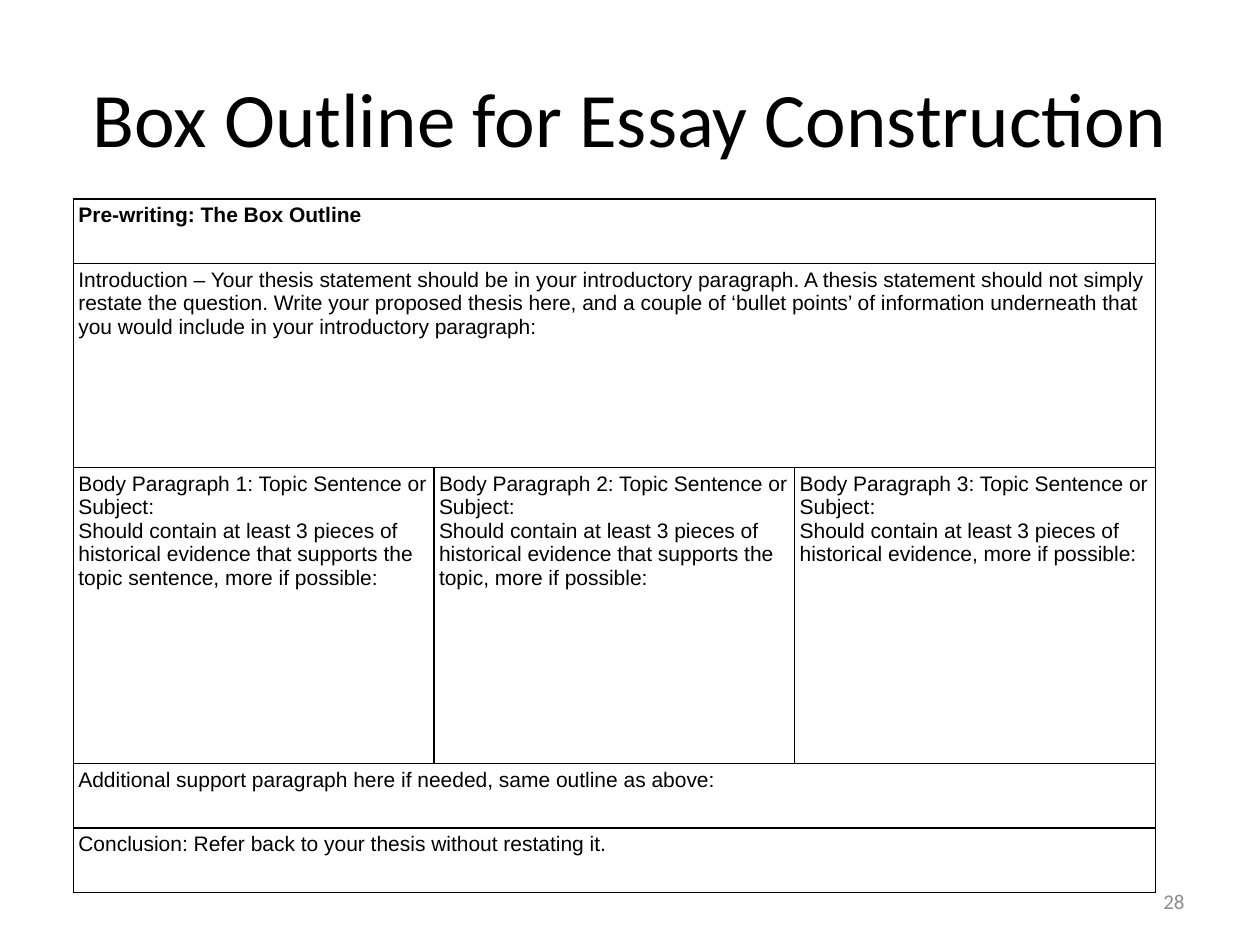
from lxml import etree
from pptx import Presentation
from pptx.dml.color import RGBColor
from pptx.enum.text import MSO_ANCHOR, PP_ALIGN
from pptx.oxml.ns import qn
from pptx.util import Cm, Pt

LEFT, CENTER, RIGHT = PP_ALIGN.LEFT, PP_ALIGN.CENTER, PP_ALIGN.RIGHT
MIDDLE = MSO_ANCHOR.MIDDLE
COLORS = {"text": "000000", "border": "000000", "number": "8C8C8C"}


def write(tf, *lines, size=12, font="Arial", color="text", bold=False, align=LEFT):
    tf.word_wrap = True
    for i, line in enumerate(lines):
        p = tf.paragraphs[0] if i == 0 else tf.add_paragraph()
        p.alignment = align
        r = p.add_run()
        r.text = line
        r.font.size = Pt(size)
        r.font.name = font
        r.font.bold = bold
        r.font.color.rgb = RGBColor.from_string(COLORS[color])


def add_borders(cell):
    tcPr = cell._tc.get_or_add_tcPr()
    for i, side in enumerate(("lnL", "lnR", "lnT", "lnB")):
        ln = etree.Element(qn("a:" + side), w=str(Pt(1)))
        fill = etree.SubElement(ln, qn("a:solidFill"))
        etree.SubElement(fill, qn("a:srgbClr"), val=COLORS["border"])
        tcPr.insert(i, ln)


prs = Presentation()
prs.slide_width, prs.slide_height = Cm(25.4), Cm(19.05)
s = prs.slides.add_slide(prs.slide_layouts[6])

# Title
tf = s.shapes.add_textbox(Cm(1.27), Cm(0.76), Cm(22.86), Cm(3.18)).text_frame
tf.vertical_anchor = MIDDLE
write(tf, "Box Outline for Essay Construction", size=44, font="Calibri", align=CENTER)

# Box outline: row height and the paragraphs of each cell
evidence = "Should contain at least 3 pieces of historical evidence"
endings = (
    " that supports the topic sentence, more if possible:",
    " that supports the topic, more if possible:",
    ", more if possible:",
)
body = [
    (f"Body Paragraph {n}: Topic Sentence or Subject:", evidence + ending)
    for n, ending in enumerate(endings, 1)
]
rows = [
    (1.3, [("Pre-writing: The Box Outline",)]),
    (4.11, [(
        "Introduction – Your thesis statement should be in your introductory paragraph. "
        "A thesis statement should not simply restate the question. Write your proposed "
        "thesis here, and a couple of ‘bullet points’ of information underneath that you "
        "would include in your introductory paragraph:",
    )]),
    (5.97, body),
    (1.3, [("Additional support paragraph here if needed, same outline as above:",)]),
    (1.3, [("Conclusion: Refer back to your thesis without restating it.",)]),
]
col_width = 7.27
total_height = sum(height for height, _ in rows)
table = s.shapes.add_table(
    len(rows), 3, Cm(1.48), Cm(4.01), Cm(3 * col_width), Cm(total_height)
).table
table.first_row = table.horz_banding = False
for col in table.columns:
    col.width = Cm(col_width)

for i, (height, texts) in enumerate(rows):
    table.rows[i].height = Cm(height)
    for j in range(3):
        cell = table.cell(i, j)
        cell.margin_left = cell.margin_right = Cm(0.1)
        cell.margin_top = cell.margin_bottom = Cm(0.1)
        cell.fill.background()
        add_borders(cell)
    if len(texts) == 1:
        table.cell(i, 0).merge(table.cell(i, 2))
    for j, lines in enumerate(texts):
        write(table.cell(i, j).text_frame, *lines, bold=i == 0)

# Slide number
tf = s.shapes.add_textbox(Cm(18.2), Cm(17.66), Cm(5.93), Cm(1.01)).text_frame
tf.vertical_anchor = MIDDLE
write(tf, "28", font="Calibri", color="number", align=RIGHT)

prs.save("out.pptx")
